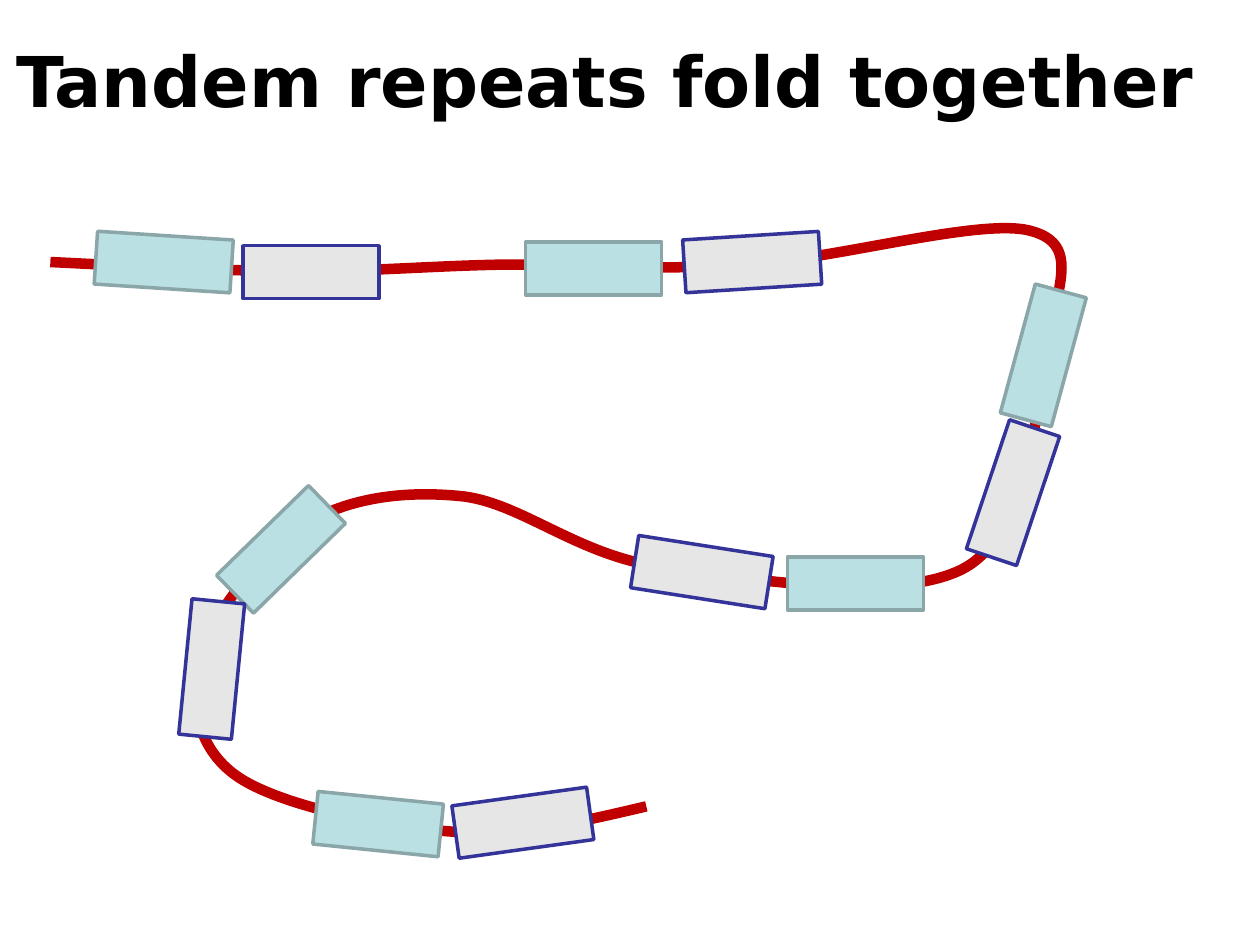
from typing import NamedTuple

from lxml.etree import SubElement
from pptx import Presentation
from pptx.dml.color import RGBColor
from pptx.enum.shapes import MSO_SHAPE
from pptx.enum.text import MSO_ANCHOR, MSO_AUTO_SIZE, PP_ALIGN
from pptx.oxml.ns import qn
from pptx.util import Inches, Pt

# Grid of 1000 columns by 750 rows, one cell being 0.01 inch
COLS, ROWS = 1000, 750
CELL = Inches(10) // COLS

BLACK = RGBColor(0x00, 0x00, 0x00)
RED = RGBColor(0xC0, 0x00, 0x00)
TEAL = RGBColor(0xBB, 0xE0, 0xE3)
TEAL_EDGE = RGBColor(0x8A, 0xA6, 0xA8)
GREY = RGBColor(0xE6, 0xE6, 0xE6)
NAVY = RGBColor(0x33, 0x33, 0x99)

UNIT_HEIGHT = 42


class Unit(NamedTuple):
    """One half of a repeat: column, row, rotation in degrees, width in cells."""
    col: int
    row: int
    angle: float = 0
    width: int = 108


class Style(NamedTuple):
    fill: RGBColor
    edge: RGBColor


FIRST_HALF = Style(TEAL, TEAL_EDGE)
SECOND_HALF = Style(GREY, NAVY)

# Pairs in order along the chain
REPEATS = [
    (Unit(76, 187, 3.7), Unit(193, 195)),
    (Unit(417, 192), Unit(543, 187, 356.4)),
    (Unit(775, 261, 105.2, 106), Unit(750, 370, 108.5)),
    (Unit(625, 442, 180), Unit(503, 433, 188.9)),
    (Unit(172, 415, 315.7, 102), Unit(114, 510, 95.6)),
    (Unit(250, 633, 185.8, 100), Unit(361, 632, 352.1)),
]

# Start of the chain, then two handles and an end point per Bézier segment
CHAIN = [
    (40, 208),
    (104, 211), (169, 215), (229, 215),
    (289, 216), (340, 211), (401, 210),
    (461, 210), (523, 215), (592, 210),
    (662, 206), (777, 173), (817, 183),
    (857, 193), (840, 225), (832, 270),
    (824, 314), (818, 420), (767, 450),
    (715, 480), (591, 459), (525, 450),
    (459, 441), (415, 400), (368, 394),
    (321, 389), (277, 395), (242, 416),
    (208, 437), (169, 487), (159, 521),
    (150, 554), (155, 593), (188, 616),
    (221, 639), (303, 656), (358, 660),
    (412, 664), (462, 652), (513, 640),
]


def draw_chain(s, points: list[tuple[int, int]]) -> None:
    builder = s.shapes.build_freeform(*points[0], scale=CELL)
    builder.add_line_segments(points[1:], close=False)
    sp = builder.convert_to_shape()
    sp.shadow.inherit = False
    sp.fill.background()
    sp.line.color.rgb = RED
    sp.line.width = Pt(6)
    # Join each three straight steps into one curve
    steps = list(sp.element.iter(qn("a:lnTo")))
    outline = steps[0].getparent()
    for i in range(0, len(steps), 3):
        curve = SubElement(outline, qn("a:cubicBezTo"))
        for step in steps[i:i + 3]:
            curve.append(step[0])
            outline.remove(step)


def draw_unit(s, unit: Unit, style: Style) -> None:
    box = (unit.col, unit.row, unit.width, UNIT_HEIGHT)
    sp = s.shapes.add_shape(MSO_SHAPE.RECTANGLE, *(n * CELL for n in box))
    sp.rotation = unit.angle
    sp.shadow.inherit = False
    sp.fill.solid()
    sp.fill.fore_color.rgb = style.fill
    sp.line.color.rgb = style.edge
    sp.line.width = Pt(2)


def set_title(s, text: str) -> None:
    sp = s.shapes.title
    sp.left, sp.top, sp.width, sp.height = (n * CELL for n in (0, 25, 960, 77))
    tf = sp.text_frame
    tf.text = text
    tf.word_wrap = False
    tf.auto_size = MSO_AUTO_SIZE.SHAPE_TO_FIT_TEXT
    tf.vertical_anchor = MSO_ANCHOR.TOP
    p = tf.paragraphs[0]
    p.alignment = PP_ALIGN.CENTER
    font = p.runs[0].font
    font.name, font.size, font.bold = "DejaVu Sans", Pt(40), True
    font.color.rgb = BLACK


def main() -> None:
    prs = Presentation()
    prs.slide_width, prs.slide_height = COLS * CELL, ROWS * CELL
    s = prs.slides.add_slide(prs.slide_layouts[5])  # title only

    set_title(s, "Tandem repeats fold together")
    draw_chain(s, CHAIN)
    for first, second in REPEATS:
        draw_unit(s, first, FIRST_HALF)
        draw_unit(s, second, SECOND_HALF)

    prs.save("out.pptx")


if __name__ == "__main__":
    main()
